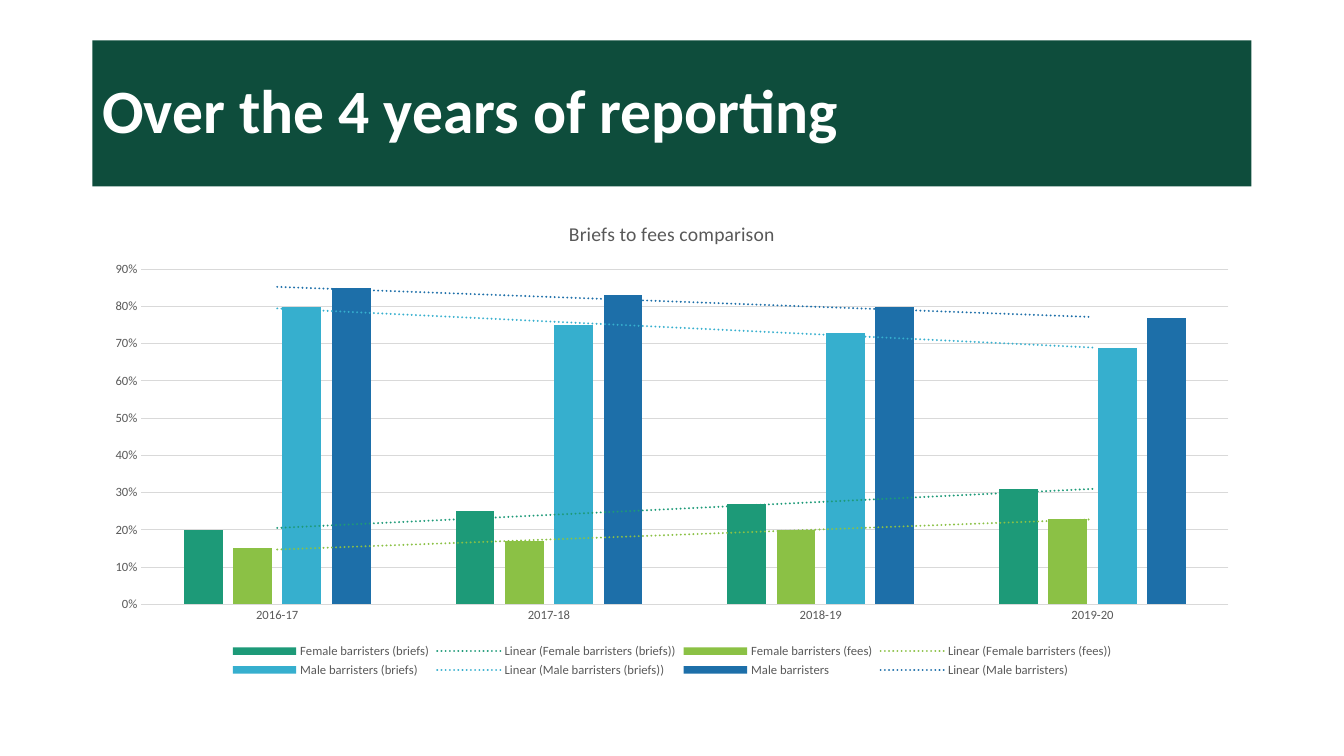
from dataclasses import dataclass

from lxml.etree import _Element as Element
from pptx import Presentation
from pptx.chart.chart import Chart
from pptx.chart.data import CategoryChartData
from pptx.dml.color import RGBColor
from pptx.enum.chart import XL_CHART_TYPE as ChartType
from pptx.enum.chart import XL_LEGEND_POSITION as LegendPosition
from pptx.enum.chart import XL_TICK_MARK as TickMark
from pptx.enum.shapes import MSO_SHAPE as ShapeKind
from pptx.enum.text import MSO_ANCHOR as Anchor
from pptx.enum.text import PP_ALIGN as Align
from pptx.oxml import parse_xml
from pptx.oxml.ns import nsdecls, qn
from pptx.slide import Slide
from pptx.text.text import Font
from pptx.util import Emu, Pt

# Grid of 160 columns by 90 rows over a 13.33 by 7.5 inch slide
STEP = 76200
COLUMNS, ROWS = 160, 90

FONT_NAME = "Calibri"
BANNER_GREEN = "0E4D3C"
WHITE = "FFFFFF"
LABEL_GREY = "595959"
GRID_GREY = "D9D9D9"


@dataclass(frozen=True)
class Area:
    column: float
    row: float
    columns: float
    rows: float

    def box(self) -> tuple[Emu, ...]:
        sides = (self.column, self.row, self.columns, self.rows)
        return tuple(Emu(round(side * STEP)) for side in sides)


@dataclass(frozen=True)
class Group:
    name: str
    shares: tuple[float, ...]
    color: str


BANNER_AREA = Area(11, 4.8, 138, 17.4)
CHART_AREA = Area(11, 24, 138, 57.1)
YEARS = ("2016-17", "2017-18", "2018-19", "2019-20")
GROUPS = (
    Group("Female barristers (briefs)", (0.20, 0.25, 0.27, 0.31), "1D9A78"),
    Group("Female barristers (fees)", (0.15, 0.17, 0.20, 0.23), "8BC145"),
    Group("Male barristers (briefs)", (0.80, 0.75, 0.73, 0.69), "36AFCE"),
    Group("Male barristers", (0.85, 0.83, 0.80, 0.77), "1D6FA9"),
)


def rgb(color: str) -> RGBColor:
    return RGBColor.from_string(color)


def style_font(font: Font, size: float, color: str, bold: bool = False) -> None:
    font.name = FONT_NAME
    font.size = Pt(size)
    font.bold = bold
    font.color.rgb = rgb(color)


def trendline(color: str) -> Element:
    return parse_xml(
        f'<c:trendline {nsdecls("c", "a")}><c:spPr>'
        f'<a:ln w="{Pt(1.5)}" cap="rnd"><a:solidFill><a:srgbClr val="{color}"/></a:solidFill>'
        '<a:prstDash val="sysDot"/></a:ln></c:spPr>'
        '<c:trendlineType val="linear"/><c:dispRSqr val="0"/><c:dispEq val="0"/>'
        "</c:trendline>"
    )


def add_banner(slide: Slide, heading: str) -> None:
    banner = slide.shapes.add_shape(ShapeKind.RECTANGLE, *BANNER_AREA.box())
    banner.shadow.inherit = False
    banner.fill.solid()
    banner.fill.fore_color.rgb = rgb(BANNER_GREEN)
    banner.line.fill.background()
    frame = banner.text_frame
    frame.text = heading
    frame.word_wrap = True
    frame.vertical_anchor = Anchor.MIDDLE
    line = frame.paragraphs[0]
    line.alignment = Align.LEFT
    line.line_spacing = 0.9
    style_font(line.runs[0].font, 44, WHITE, bold=True)


def style_axes(chart: Chart) -> None:
    years, shares = chart.category_axis, chart.value_axis
    for axis in (years, shares):
        axis.major_tick_mark = axis.minor_tick_mark = TickMark.NONE
        style_font(axis.tick_labels.font, 9, LABEL_GREY)
    shares.has_major_gridlines = True
    for rule in (years.format.line, shares.major_gridlines.format.line):
        rule.width = Pt(0.75)
        rule.color.rgb = rgb(GRID_GREY)
    shares.format.line.fill.background()
    shares.minimum_scale, shares.maximum_scale, shares.major_unit = 0, 0.9, 0.1
    shares.tick_labels.number_format = "0%"
    shares.tick_labels.number_format_is_linked = False


def add_comparison(slide: Slide, heading: str) -> None:
    comparison = CategoryChartData(number_format="0%")
    comparison.categories = YEARS
    for group in GROUPS:
        comparison.add_series(group.name, group.shares)
    chart = slide.shapes.add_chart(
        ChartType.COLUMN_CLUSTERED, *CHART_AREA.box(), comparison
    ).chart
    style_font(chart.font, 10, "000000")

    # Heading and legend
    chart.has_title = True
    chart.chart_title.include_in_layout = False
    title_frame = chart.chart_title.text_frame
    title_frame.text = heading
    style_font(title_frame.paragraphs[0].runs[0].font, 14, LABEL_GREY)
    chart.has_legend = True
    chart.legend.position = LegendPosition.BOTTOM
    chart.legend.include_in_layout = False
    style_font(chart.legend.font, 9, LABEL_GREY)

    style_axes(chart)

    # Columns, each group with its linear trend
    columns = chart.plots[0]
    columns.gap_width, columns.overlap = 219, -27
    columns.vary_by_categories = False
    series_nodes = chart.element.iter(qn("c:ser"))
    for group, series, node in zip(GROUPS, columns.series, series_nodes):
        series.invert_if_negative = False
        series.format.fill.solid()
        series.format.fill.fore_color.rgb = rgb(group.color)
        node.find(qn("c:cat")).addprevious(trendline(group.color))


def main() -> None:
    deck = Presentation()
    deck.slide_width, deck.slide_height = Emu(COLUMNS * STEP), Emu(ROWS * STEP)
    slide = deck.slides.add_slide(deck.slide_layouts[6])
    add_banner(slide, "Over the 4 years of reporting")
    add_comparison(slide, "Briefs to fees comparison")
    deck.save("out.pptx")


if __name__ == "__main__":
    main()
